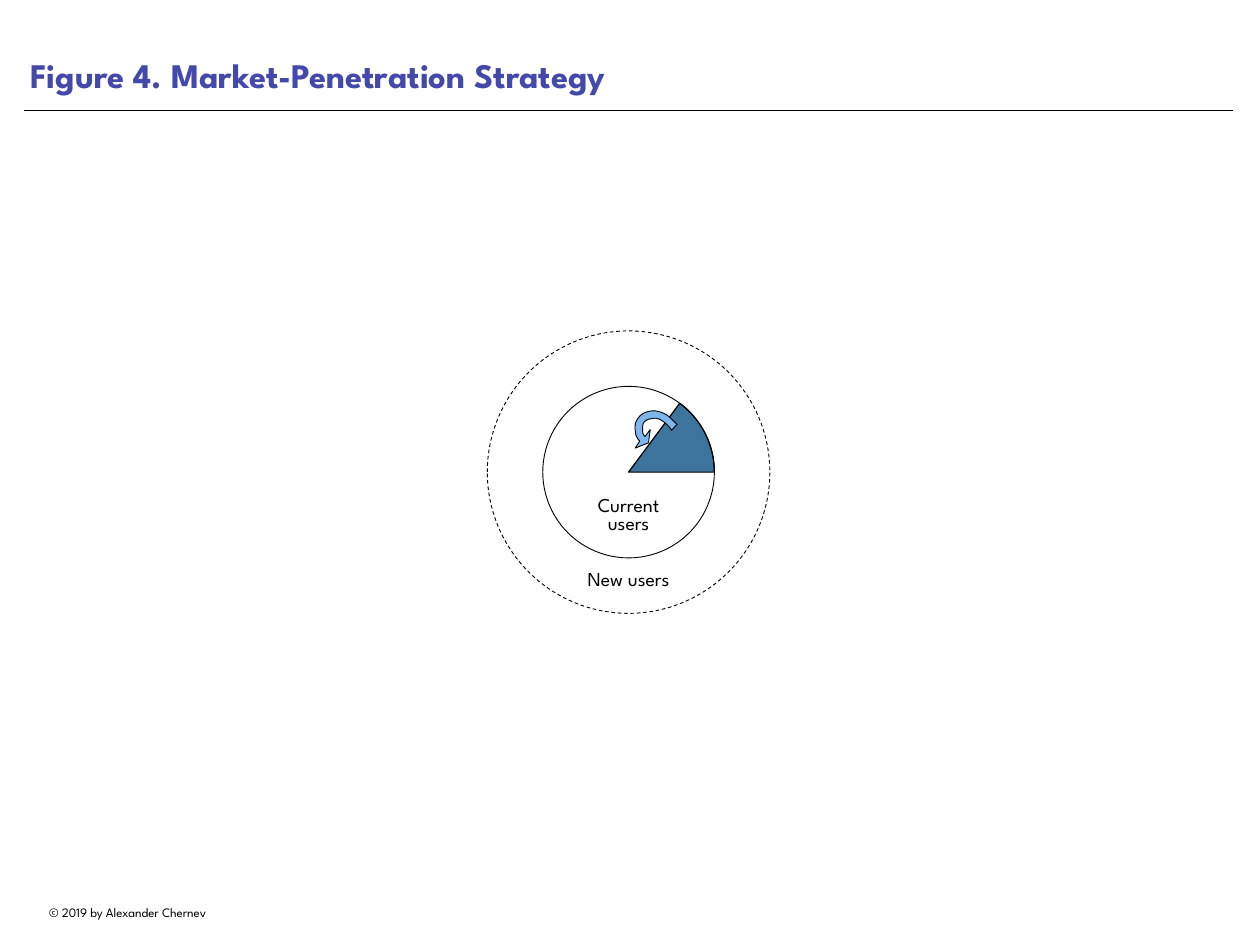
import math

from lxml import etree
from pptx import Presentation
from pptx.dml.color import RGBColor
from pptx.enum.dml import MSO_LINE
from pptx.enum.shapes import MSO_CONNECTOR, MSO_SHAPE
from pptx.enum.text import MSO_ANCHOR, MSO_AUTO_SIZE, PP_ALIGN
from pptx.oxml.ns import qn
from pptx.util import Cm, Pt

STRAIGHT = MSO_CONNECTOR.STRAIGHT
OVAL = MSO_SHAPE.OVAL
DASH = MSO_LINE.DASH
LEFT, CENTER = PP_ALIGN.LEFT, PP_ALIGN.CENTER
MIDDLE, BOTTOM, TOP = MSO_ANCHOR.MIDDLE, MSO_ANCHOR.BOTTOM, MSO_ANCHOR.TOP
NO_FIT = MSO_AUTO_SIZE.NONE

FONT = "League Spartan"
COLORS = {"title": "4349AA", "ink": "000000", "wedge": "3D749D", "arrow": "7EB5EA"}

# Shared centre of the circles, in cm
CX, CY = 18.02, 13.54
CURRENT_RADIUS, NEW_RADIUS = 2.46, 4.05
WEDGE_DEGREES = 53.4

# Turning arrow, in cm: straight head, then curves as (control, control, end)
ARROW_HEAD = [(18.49, 12.52), (18.64, 12.32), (18.59, 12.7), (18.21, 12.85), (18.34, 12.65)]
ARROW_OUTER = [
    ((18.26, 12.57), (18.21, 12.47), (18.21, 12.34)),
    ((18.19, 12.24), (18.21, 12.12), (18.26, 12.04)),
    ((18.34, 11.89), (18.49, 11.81), (18.64, 11.79)),
    ((18.8, 11.76), (18.95, 11.81), (19.1, 11.89)),
    ((19.2, 11.96), (19.3, 12.07), (19.41, 12.17)),
]
ARROW_TAIL = (19.25, 12.34)
ARROW_INNER = [
    ((19.23, 12.29), (19.2, 12.27), (19.18, 12.24)),
    ((19.13, 12.19), (19.08, 12.14), (19.02, 12.09)),
    ((18.97, 12.07), (18.92, 12.01), (18.85, 12.01)),
    ((18.8, 11.99), (18.75, 11.99), (18.67, 12.01)),
    ((18.57, 12.01), (18.49, 12.07), (18.44, 12.14)),
    ((18.42, 12.22), (18.42, 12.29), (18.42, 12.34)),
    ((18.42, 12.42), (18.44, 12.47), (18.49, 12.52)),
]


def rgb(name):
    return RGBColor.from_string(COLORS[name])


def place(sp, left, top, width, height):
    sp.left, sp.top, sp.width, sp.height = Cm(left), Cm(top), Cm(width), Cm(height)


def set_text(sp, text, size, color="ink", align=CENTER, anchor=MIDDLE,
             inset=None, wrap=True, bold=False, spacing=None):
    tf = sp.text_frame
    tf.word_wrap, tf.auto_size, tf.vertical_anchor = wrap, NO_FIT, anchor
    if inset is not None:
        tf.margin_left = tf.margin_right = tf.margin_top = tf.margin_bottom = Cm(inset)
    p = tf.paragraphs[0]
    p.text, p.alignment = text, align
    if spacing:
        p.line_spacing = spacing
    p.font.name, p.font.size, p.font.bold = FONT, Pt(size), bold
    p.font.color.rgb = rgb(color)


def add_label(slide, text, left, top, width, height, size, **style):
    sp = slide.shapes.add_textbox(Cm(left), Cm(top), Cm(width), Cm(height))
    set_text(sp, text, size, **style)


def add_rule(slide, x1, x2, y):
    sp = slide.shapes.add_connector(STRAIGHT, Cm(x1), Cm(y), Cm(x2), Cm(y))
    sp.line.color.rgb, sp.line.width = rgb("ink"), Pt(0.5)
    etree.SubElement(sp._element.spPr, qn("a:effectLst"))


def add_circle(slide, radius, dash=None):
    sp = slide.shapes.add_shape(OVAL, Cm(CX - radius), Cm(CY - radius),
                                Cm(2 * radius), Cm(2 * radius))
    sp.shadow.inherit = False
    sp.fill.background()
    sp.line.color.rgb, sp.line.width = rgb("ink"), Pt(0.75)
    if dash:
        sp.line.dash_style = dash


def add_outline(slide, points, color, line_width):
    points = [(Cm(x), Cm(y)) for x, y in points]
    builder = slide.shapes.build_freeform(*points[0])
    builder.add_line_segments(points[1:], close=True)
    sp = builder.convert_to_shape()
    sp.shadow.inherit = False
    sp.fill.solid()
    sp.fill.fore_color.rgb = rgb(color)
    sp.line.color.rgb, sp.line.width = rgb("ink"), Pt(line_width)


def wedge_points(steps=40):
    angles = [math.radians(WEDGE_DEGREES * i / steps) for i in range(steps + 1)]
    return [(CX, CY)] + [(CX + CURRENT_RADIUS * math.cos(a),
                          CY - CURRENT_RADIUS * math.sin(a)) for a in angles]


def curve_points(start, curves, steps=6):
    points = []
    for c1, c2, end in curves:
        for i in range(1, steps + 1):
            t = i / steps
            weights = ((1 - t) ** 3, 3 * t * (1 - t) ** 2, 3 * t * t * (1 - t), t ** 3)
            knots = (start, c1, c2, end)
            points.append(tuple(sum(w * k[axis] for w, k in zip(weights, knots))
                                for axis in (0, 1)))
        start = end
    return points


def arrow_points():
    outer = curve_points(ARROW_HEAD[-1], ARROW_OUTER)
    inner = curve_points(ARROW_TAIL, ARROW_INNER)
    return ARROW_HEAD + outer + [ARROW_TAIL] + inner[:-1]


def main():
    prs = Presentation()
    prs.slide_width, prs.slide_height = Cm(36.12), Cm(27.1)
    slide = prs.slides.add_slide(prs.slide_layouts[5])

    # Footer, rule and title
    add_label(slide, "© 2019 by Alexander Chernev", 0.69, 25.81, 5.94, 0.71, 10.5,
              anchor=TOP, wrap=False)
    add_rule(slide, 0.69, 35.36, 3.15)
    title = slide.shapes.title
    place(title, 0.69, 0, 34.65, 2.92)
    set_text(title, "Figure 4. Market-Penetration Strategy", 28, color="title",
             align=LEFT, anchor=BOTTOM, inset=0.18, bold=True)

    # Market circles with the share wedge
    add_outline(slide, wedge_points(), "wedge", 1)
    add_circle(slide, CURRENT_RADIUS)
    add_circle(slide, NEW_RADIUS, DASH)

    # User groups
    for text, top, height in (("Current users", 14.02, 1.55), ("New users", 16.15, 0.99)):
        add_label(slide, text, CX - 1.65, top, 3.3, height, 16, inset=0.15, spacing=0.8)

    # Arrow from the wedge into the current market
    add_outline(slide, arrow_points(), "arrow", 0.75)

    prs.save("out.pptx")


if __name__ == "__main__":
    main()
